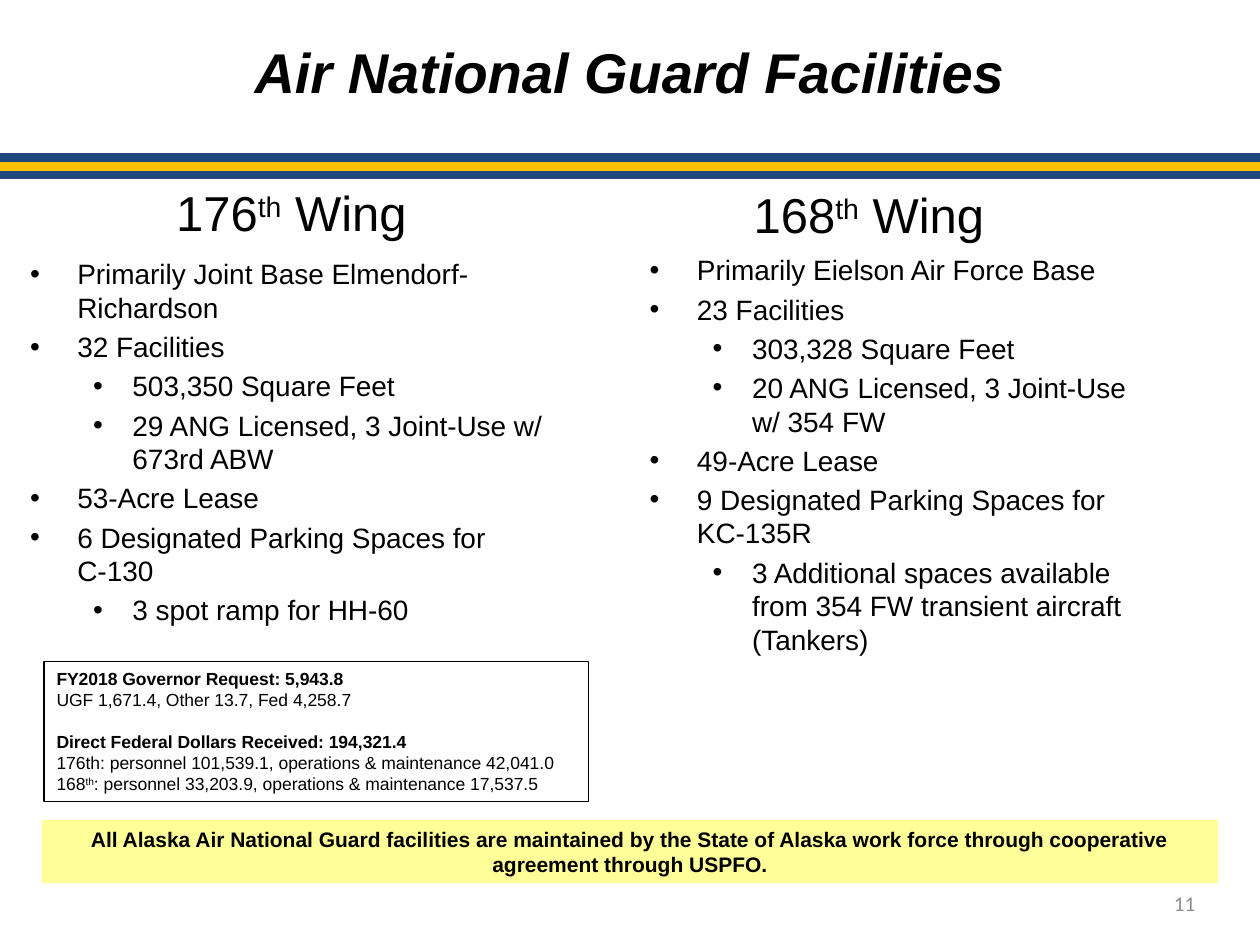
from dataclasses import dataclass

from lxml.etree import SubElement
from pptx import Presentation
from pptx.dml.color import RGBColor
from pptx.enum.shapes import MSO_CONNECTOR, MSO_SHAPE
from pptx.enum.text import MSO_ANCHOR, MSO_AUTO_SIZE, PP_ALIGN
from pptx.oxml.ns import qn
from pptx.util import Pt


@dataclass
class Span:
    text: str
    bold: bool = False
    italic: bool = False
    raised: bool = False


@dataclass
class Wing:
    heading: list[Span]
    heading_area: tuple
    bullets: list[tuple[int, str]]
    bullet_area: tuple
    insets: tuple


INSETS = (7.2, 3.6)
INDENTS = {0: (27, -27), 1: (58.5, -22.5)}  # level: left margin, first line

WINGS = [
    Wing(
        [Span("176"), Span("th", raised=True), Span(" Wing")],
        (18, 101, 297, 68),
        [
            (0, "Primarily Joint Base Elmendorf-Richardson"),
            (0, "32 Facilities"),
            (1, "503,350 Square Feet"),
            (1, "29 ANG Licensed, 3 Joint-Use w/ 673rd ABW"),
            (0, "53-Acre Lease"),
            (0, "6 Designated Parking Spaces for C-130"),
            (1, "3 spot ramp for HH-60"),
        ],
        (12.2, 144, 317, 252),
        (5, 2.9),
    ),
    Wing(
        [Span("168"), Span("th", raised=True), Span(" Wing")],
        (348, 102, 297, 68),
        [
            (0, "Primarily Eielson Air Force Base"),
            (0, "23 Facilities"),
            (1, "303,328 Square Feet"),
            (1, "20 ANG Licensed, 3 Joint-Use w/ 354 FW"),
            (0, "49-Acre Lease"),
            (0, "9 Designated Parking Spaces for KC-135R"),
            (1, "3 Additional spaces available from 354 FW transient aircraft (Tankers)"),
        ],
        (364.2, 141, 302.4, 276.5),
        INSETS,
    ),
]

BUDGET = [
    [Span("FY2018 Governor Request: 5,943.8", bold=True)],
    [Span("UGF 1,671.4, Other 13.7, Fed 4,258.7")],
    [Span("Direct Federal Dollars Received: 194,321.4", bold=True)],
    [Span("176th: personnel 101,539.1, operations & maintenance 42,041.0")],
    [Span("168"), Span("th", raised=True),
     Span(": personnel 33,203.9, operations & maintenance 17,537.5")],
]


def color(value: str) -> RGBColor:
    return RGBColor.from_string(value)


def prepare(box, insets=INSETS, anchor=MSO_ANCHOR.TOP):
    frame = box.text_frame
    frame.word_wrap = True
    frame.auto_size = MSO_AUTO_SIZE.NONE
    frame.vertical_anchor = anchor
    frame.margin_left = frame.margin_right = Pt(insets[0])
    frame.margin_top = frame.margin_bottom = Pt(insets[1])
    return frame


def add_paragraph(frame, first: bool):
    return frame.paragraphs[0] if first else frame.add_paragraph()


def write(para, spans: list[Span], size: float, align=PP_ALIGN.LEFT,
          font: str = "Arial", ink: str = "000000") -> None:
    para.alignment = align
    for item in spans:
        span = para.add_run()
        span.text = item.text
        span.font.name = font
        span.font.size = Pt(size)
        span.font.bold = item.bold
        span.font.italic = item.italic
        span.font.color.rgb = color(ink)
        if item.raised:
            span._r.get_or_add_rPr().set("baseline", "30000")


def add_text_box(page, area: tuple, insets=INSETS):
    return prepare(page.shapes.add_textbox(*map(Pt, area)), insets)


def add_panel(page, area: tuple, fill=None, line=None, anchor=MSO_ANCHOR.TOP):
    panel = page.shapes.add_shape(MSO_SHAPE.RECTANGLE, *map(Pt, area))
    panel.shadow.inherit = False
    if fill:
        panel.fill.solid()
        panel.fill.fore_color.rgb = color(fill)
    else:
        panel.fill.background()
    if line:
        panel.line.color.rgb = color(line)
        panel.line.width = Pt(0.75)
    else:
        panel.line.fill.background()
    return prepare(panel, anchor=anchor)


def add_stripe(page, y: float, ink: str) -> None:
    stripe = page.shapes.add_connector(
        MSO_CONNECTOR.STRAIGHT, Pt(0), Pt(y), Pt(720), Pt(y))
    stripe.line.color.rgb = color(ink)
    stripe.line.width = Pt(5)
    SubElement(stripe._element.spPr, qn("a:effectLst"))


def add_bullet(para, level: int) -> None:
    para.level = level
    margin, indent = INDENTS[level]
    properties = para._p.get_or_add_pPr()
    properties.set("marL", str(Pt(margin)))
    properties.set("indent", str(Pt(indent)))
    SubElement(properties, qn("a:buFont"), typeface="Arial")
    SubElement(properties, qn("a:buChar"), char="•")


def add_wing(page, wing: Wing) -> None:
    heading = add_text_box(page, wing.heading_area)
    write(heading.paragraphs[0], wing.heading, 28, PP_ALIGN.CENTER)
    frame = add_text_box(page, wing.bullet_area, wing.insets)
    for index, (level, text) in enumerate(wing.bullets):
        para = add_paragraph(frame, index == 0)
        add_bullet(para, level)
        if index:
            para.space_before = Pt(3.2)
        write(para, [Span(text)], 16)


def main() -> None:
    deck = Presentation()
    deck.slide_width, deck.slide_height = Pt(720), Pt(540)
    page = deck.slides.add_slide(deck.slide_layouts[5])

    # Title and the stripes below it
    title = page.shapes.title
    title.left, title.top, title.width, title.height = map(Pt, (0, 18, 720, 54))
    write(prepare(title).paragraphs[0],
          [Span("Air National Guard Facilities", bold=True, italic=True)],
          32, PP_ALIGN.CENTER)
    for index, ink in enumerate(("1F497D", "FFC000", "1F497D")):
        add_stripe(page, 90 + 5 * index, ink)

    # One column per wing
    for wing in WINGS:
        add_wing(page, wing)

    # Budget panel, with a gap before its second group
    budget = add_panel(page, (25.2, 378, 311, 80), line="000000")
    for index, spans in enumerate(BUDGET):
        para = add_paragraph(budget, index == 0)
        if index == 2:
            para.space_before = Pt(12)
        write(para, spans, 10)

    # Closing note and page number
    note = add_panel(page, (24, 468.7, 672, 36), fill="FFFF99",
                     anchor=MSO_ANCHOR.MIDDLE)
    write(note.paragraphs[0],
          [Span("All Alaska Air National Guard facilities are maintained by the "
                "State of Alaska work force through cooperative agreement "
                "through USPFO.", bold=True)], 12, PP_ALIGN.CENTER)
    number = add_text_box(page, (663.8, 505.4, 39, 21.8))
    write(number.paragraphs[0], [Span("11")], 12, font="Calibri", ink="8C8C8C")

    deck.save("out.pptx")


if __name__ == "__main__":
    main()
